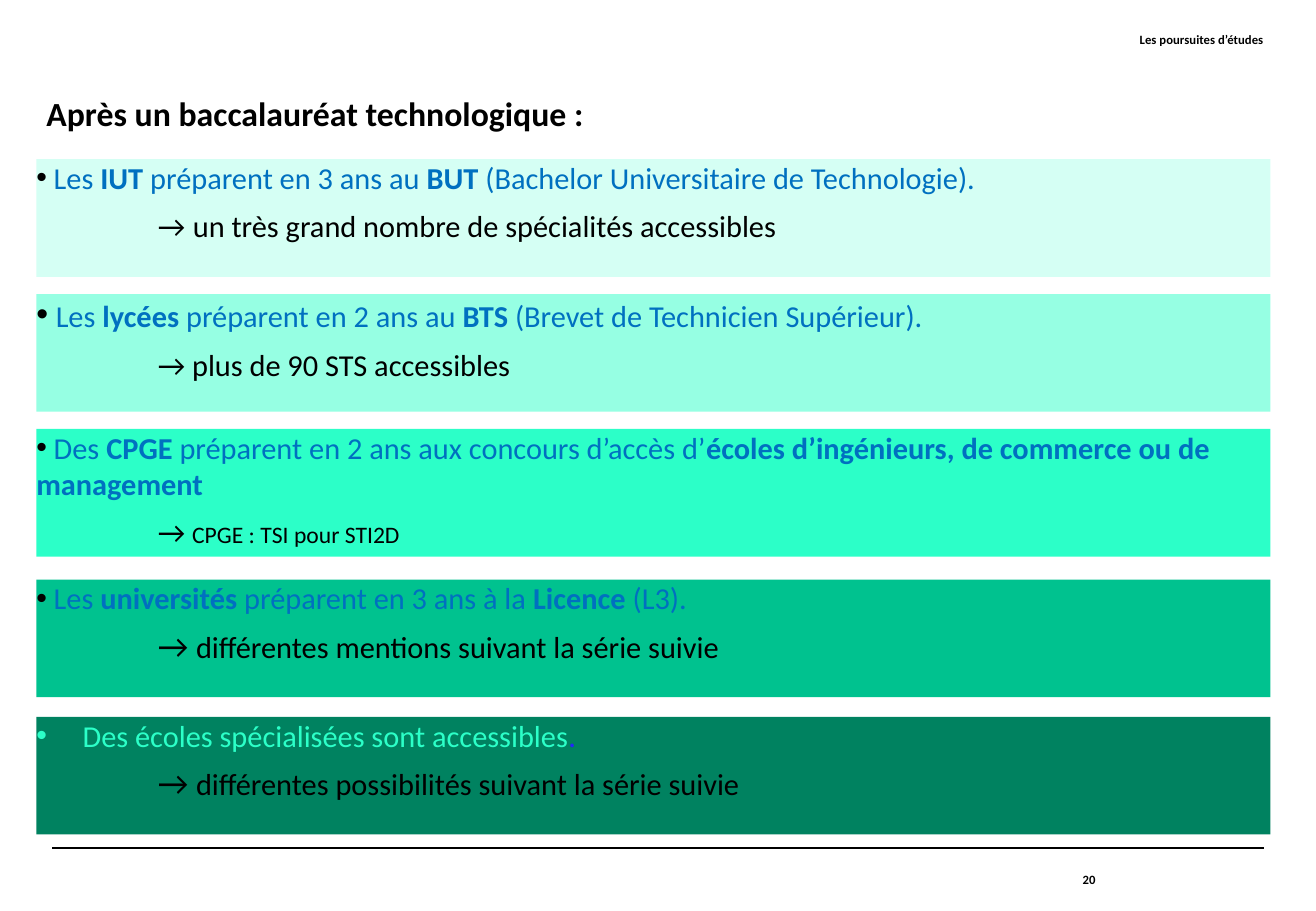
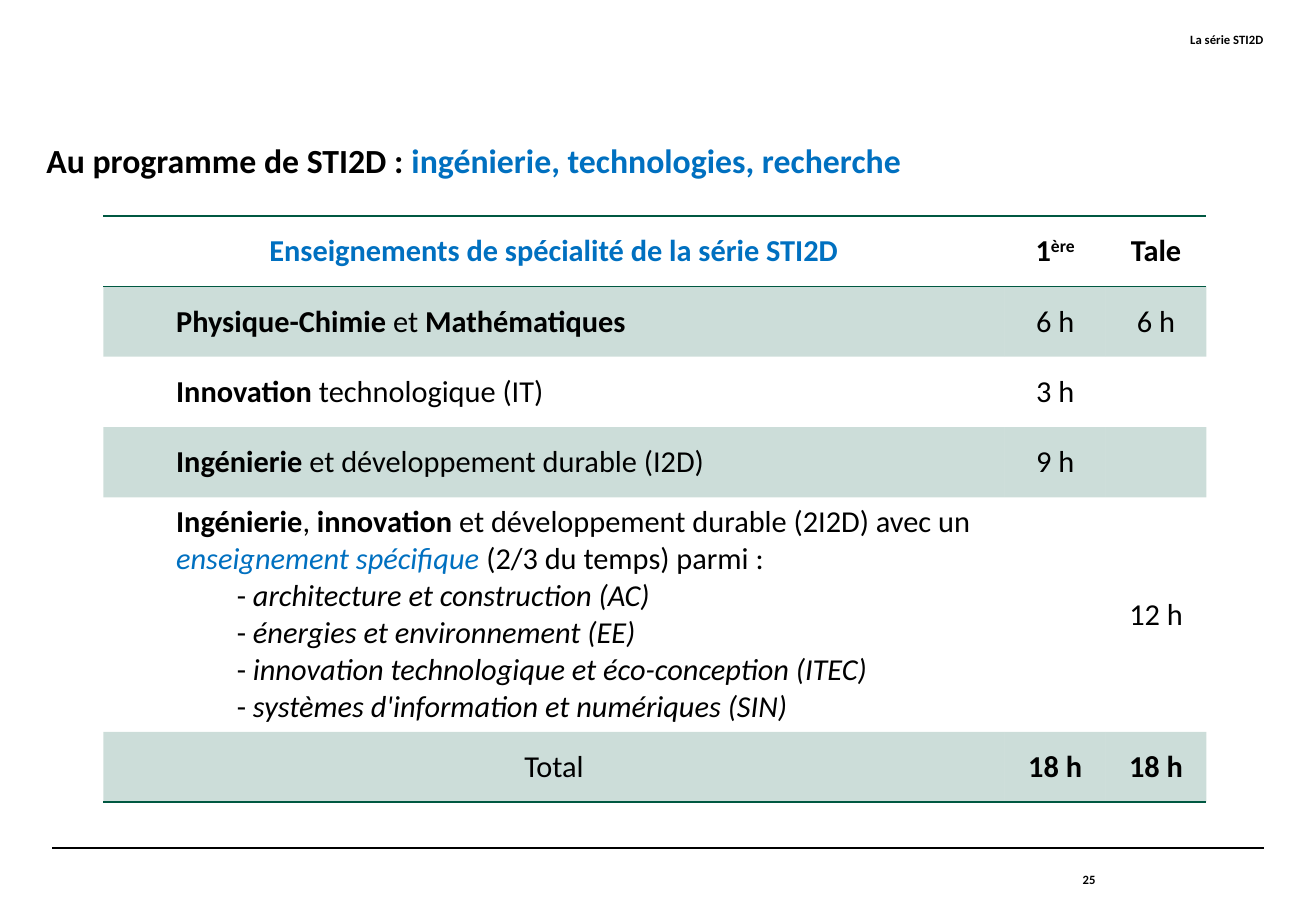
from lxml.etree import SubElement
from pptx import Presentation
from pptx.dml.color import RGBColor
from pptx.enum.shapes import MSO_CONNECTOR, MSO_SHAPE
from pptx.enum.text import MSO_ANCHOR as Anchor, MSO_AUTO_SIZE as AutoSize, PP_ALIGN as Align
from pptx.oxml import parse_xml
from pptx.oxml.ns import nsdecls, qn
from pptx.util import Cm, Pt

FONT = "Calibri"
COLORS = {
    "black": "000000",
    "blue": "0070C0",
    "violet": "2424FF",
    "forest": "005841",
    "mist": "D5FFF4",
    "mint": "96FFE3",
    "aqua": "2CFFC8",
    "jade": "00C28F",
    "pine": "008260",
}
BOLD = {"bold": True}
BLUE = {"color": "blue"}
BLUE_BOLD = {"color": "blue", "bold": True}
ITALIC = {"italic": True}
BIG = {"size": 20}


def write(para, spans, size=18, bold=False, align=Align.LEFT):
    para.alignment = align
    para.font.name = FONT
    para.font.size = Pt(size)
    para.font.bold = bold
    para.font.color.rgb = RGBColor.from_string(COLORS["black"])
    for text, style in spans:
        span = para.add_run()
        span.text = text
        for name, value in style.items():
            if name == "color":
                span.font.color.rgb = RGBColor.from_string(COLORS[value])
            elif name == "size":
                span.font.size = Pt(value)
            elif name == "raised":
                span.font._element.set("baseline", str(value * 1000))
            else:
                setattr(span.font, name, value)


def add_bullet(para, char, left=0, indent=0):
    props = para._p.get_or_add_pPr()
    props.set("marL", str(Cm(left)))
    props.set("indent", str(Cm(indent)))
    SubElement(props, qn("a:buFont")).set("typeface", "Arial" if char == "•" else FONT)
    SubElement(props, qn("a:buChar")).set("char", char)


deck = Presentation()
deck.slide_width = Cm(27.52)
deck.slide_height = Cm(19.05)
title_only = deck.slide_layouts[5]

page_specs = [
    ("Les poursuites d’études", "20", 1.93, 1.19,
     [("Après un baccalauréat technologique :", {})]),
    ("La série STI2D", "25", 2.92, 0.99,
     [("Au programme de STI2D : ", {}), ("ingénierie, technologies, recherche", BLUE)]),
]

pages = []
frames = []
for section, number, top, height, heading in page_specs:
    page = deck.slides.add_slide(title_only)
    pages.append(page)

    rule = page.shapes.add_connector(
        MSO_CONNECTOR.STRAIGHT, Cm(1.09), Cm(17.73), Cm(26.44), Cm(17.73))
    rule.line.color.rgb = RGBColor.from_string(COLORS["black"])
    rule.line.width = Pt(0.8)
    SubElement(rule._element.spPr, qn("a:effectLst"))

    title = page.shapes.title
    title.left, title.top, title.width, title.height = Cm(0.97), Cm(top), Cm(25.35), Cm(height)
    write(title.text_frame.paragraphs[0], heading, 20, True)
    frames.append((title.text_frame, Anchor.TOP))

    section_box = page.shapes.add_textbox(Cm(9.96), Cm(0.66), Cm(16.46), Cm(1.32))
    write(section_box.text_frame.paragraphs[0], [(section, {})], 7.5, True, Align.RIGHT)
    frames.append((section_box.text_frame, Anchor.TOP))

    number_box = page.shapes.add_textbox(Cm(18.85), Cm(17.73), Cm(4.06), Cm(1.32))
    write(number_box.text_frame.paragraphs[0], [(number, {})], 7.5, True, Align.RIGHT)
    frames.append((number_box.text_frame, Anchor.MIDDLE))

studies_page, program_page = pages

bands = [
    ("mist", 3.33, 2.46, 0,
     [(" ", {}), ("Les ", BLUE), ("IUT", BLUE_BOLD), (" préparent en 3 ans au ", BLUE),
      ("BUT", BLUE_BOLD), (" (Bachelor Universitaire de Technologie).", BLUE)],
     [("\t", BIG), ("→", {}), (" ", BIG),
      ("un très grand nombre de spécialités accessibles", {})]),
    ("mint", 6.15, 2.46, 0,
     [(" ", BIG), ("Les ", BLUE), ("lycées", BLUE_BOLD), (" préparent en 2 ans au ", BLUE),
      ("BTS", BLUE_BOLD), (" (Brevet de Technicien Supérieur).", BLUE)],
     [("\t", BIG), ("→ plus de 90 STS accessibles", {})]),
    ("aqua", 8.97, 2.67, 0,
     [(" ", {}), ("Des ", BLUE), ("CPGE ", BLUE_BOLD),
      ("préparent en 2 ans aux concours d’accès d’", BLUE),
      ("écoles d’ingénieurs, de commerce ou de management", BLUE_BOLD)],
     [("\t", BIG), ("→ ", {}), ("CPGE : TSI pour STI2D", {"size": 14})]),
    ("jade", 12.12, 2.46, 0,
     [(" ", {}), ("Les ", BLUE), ("universités", BLUE_BOLD), (" préparent en 3 ans à la ", BLUE),
      ("Licence", BLUE_BOLD), (" (L3).", BLUE)],
     [("\t→ ", BIG), ("différentes mentions suivant la série suivie", {})]),
    ("pine", 14.99, 2.46, 0.97,
     [("Des écoles spécialisées sont accessibles", {"color": "aqua"}),
      (".", {"color": "violet"})],
     [("\t→ ", BIG), ("différentes possibilités suivant la série suivie", {})]),
]

for color, top, height, hanging, path_spans, detail_spans in bands:
    band = studies_page.shapes.add_shape(
        MSO_SHAPE.RECTANGLE, Cm(0.76), Cm(top), Cm(25.81), Cm(height))
    band.shadow.inherit = False
    band.fill.solid()
    band.fill.fore_color.rgb = RGBColor.from_string(COLORS[color])
    band.line.fill.background()
    frames.append((band.text_frame, Anchor.TOP))

    path_para = band.text_frame.paragraphs[0]
    path_para.space_after = Pt(5)
    add_bullet(path_para, "•", hanging, -hanging)
    write(path_para, path_spans)

    detail_para = band.text_frame.add_paragraph()
    detail_para.space_after = Pt(5)
    tabs = SubElement(detail_para._p.get_or_add_pPr(), qn("a:tabLst"))
    SubElement(tabs, qn("a:tab"), pos=str(Cm(2.54)), algn="l")
    write(detail_para, detail_spans)

for frame, anchor in frames:
    frame.margin_left = frame.margin_right = frame.margin_top = frame.margin_bottom = 0
    frame.auto_size = AutoSize.NONE
    frame.word_wrap = True
    frame.vertical_anchor = anchor

hours_rows = [
    ([("Enseignements de spécialité de la série STI2D", BLUE_BOLD)],
     [("1", BOLD), ("ère", {"bold": True, "raised": 30})], [("Tale", BOLD)]),
    ([("Physique-Chimie", BOLD), (" et ", {}), ("Mathématiques", BOLD)],
     [("6 h", {})], [("6 h", {})]),
    ([("Innovation", BOLD), (" technologique (IT)", {})], [("3 h", {})], []),
    ([("Ingénierie", BOLD), (" et développement durable (I2D)", {})], [("9 h", {})], []),
    ([("Ingénierie", BOLD), (", ", {}), ("innovation", BOLD),
      (" et développement durable (2I2D) avec un ", {}),
      ("enseignement spécifique", {"color": "blue", "italic": True}),
      (" (2/3 du temps) parmi :", {})],
     [], [("12 h", {})]),
    ([("Total", {})], [("18 h", BOLD)], [("18 h", BOLD)]),
]
options = [
    " architecture et construction (AC)",
    " énergies et environnement (EE)",
    " innovation technologique et éco-conception (ITEC)",
    " systèmes d'information et numériques (SIN)",
]
options_row = 4
last_row = len(hours_rows) - 1
borders = {0: ("lnT", "lnB"), last_row: ("lnB",)}

hours_frame = program_page.shapes.add_table(
    len(hours_rows), 3, Cm(2.16), Cm(4.52), Cm(23.07), Cm(12.25))
hours = hours_frame.table
hours.first_row = hours.horz_banding = False
hours._tbl.tblPr.find(qn("a:tableStyleId")).text = "{2D5ABB26-0587-4C30-8999-92F81FD0307C}"
for column, width in zip(hours.columns, (18.85, 2.11, 2.11)):
    column.width = Cm(width)

for row_index, row in enumerate(hours_rows):
    hours.rows[row_index].height = Cm(4.9 if row_index == options_row else 1.47)
    for column_index, spans in enumerate(row):
        cell = hours.cell(row_index, column_index)
        cell.vertical_anchor = Anchor.MIDDLE
        if row_index % 2:
            cell.fill.solid()
            cell.fill.fore_color.rgb = RGBColor.from_string(COLORS["forest"])
            tint = cell._tc.tcPr.find(".//" + qn("a:srgbClr"))
            SubElement(tint, qn("a:alpha")).set("val", "20000")
        else:
            cell.fill.background()
        for position, side in enumerate(borders.get(row_index, ())):
            cell._tc.tcPr.insert(position, parse_xml(
                f'<a:{side} {nsdecls("a")} w="12700"><a:solidFill>'
                f'<a:srgbClr val="{COLORS["forest"]}"/></a:solidFill></a:{side}>'))
        para = cell.text_frame.paragraphs[0]
        is_subject = column_index == 0 and 0 < row_index < last_row
        if is_subject:
            para._p.get_or_add_pPr().set("marL", str(Cm(1.27)))
        write(para, spans, align=Align.LEFT if is_subject else Align.CENTER)

for option in options:
    para = hours.cell(options_row, 0).text_frame.add_paragraph()
    add_bullet(para, "-", 2.54)
    write(para, [(option, ITALIC)])

deck.save("out.pptx")
